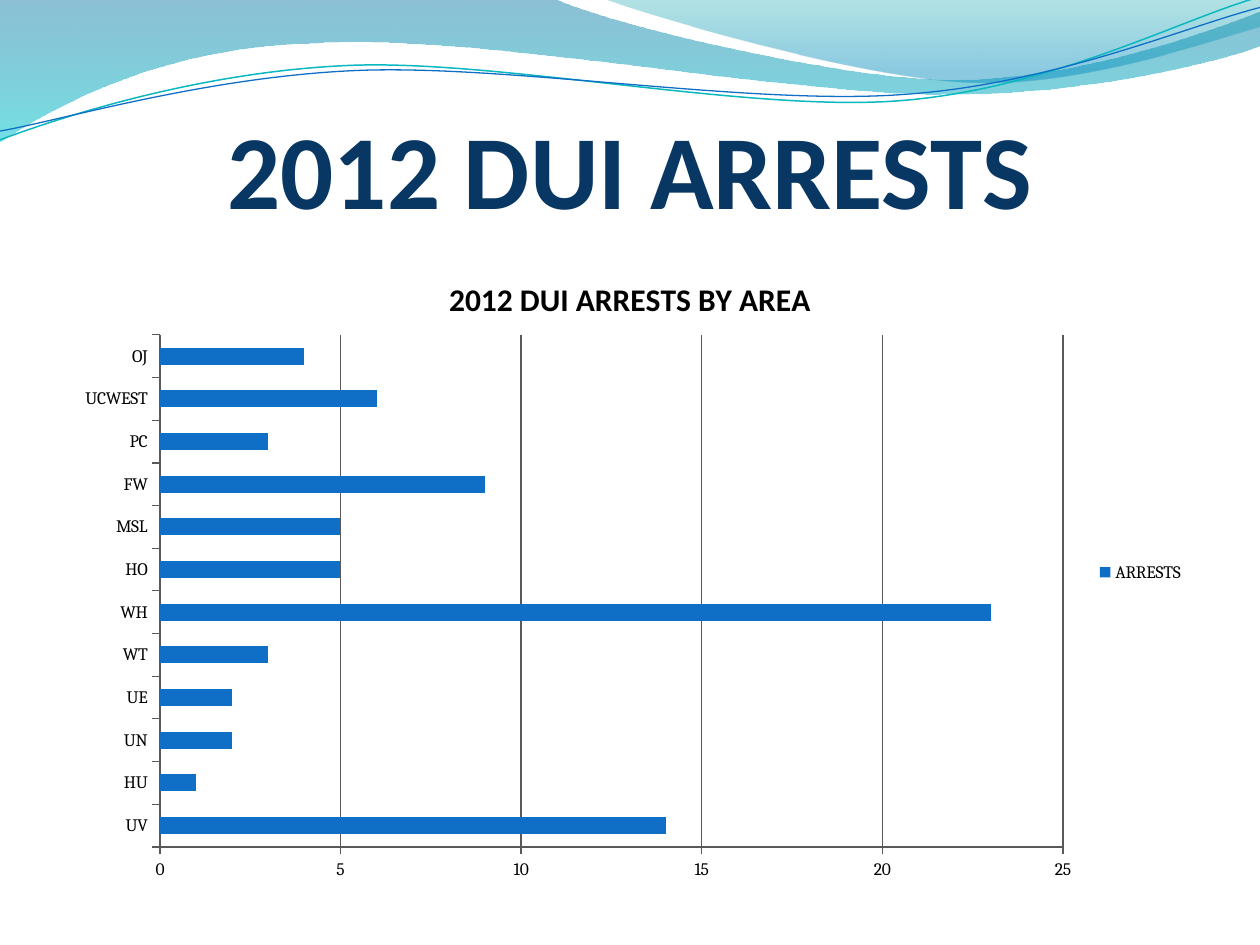
from math import cos, radians, sin
from lxml.etree import SubElement
from pptx import Presentation
from pptx.chart.data import CategoryChartData
from pptx.dml.color import RGBColor
from pptx.enum.chart import XL_CHART_TYPE as CT, XL_LEGEND_POSITION as LP, XL_TICK_MARK as TM
from pptx.enum.text import MSO_ANCHOR, PP_ALIGN
from pptx.oxml.ns import qn
from pptx.util import Pt

TITLE = "2012 DUI ARRESTS"
CHART_TITLE = "2012 DUI ARRESTS BY AREA"
SERIES = "ARRESTS"
ARRESTS = {"UV": 14, "HU": 1, "UN": 2, "UE": 2, "WT": 3, "WH": 23,
           "HO": 5, "MSL": 5, "FW": 9, "PC": 3, "UCWEST": 6, "OJ": 4}
BLUE, NAVY, BLACK, GRID = "0F6FC6", "083763", "000000", "595959"
CHART_BOX = (36, 144, 648, 366)
PLOT_BOX = (55.4, 47.4, 516, 292.6)  # inside the chart
WAVE_TILT = -2.7

# Outlines in points: a step of one point is straight, of three a cubic curve.
# Gradient stops: position, colour, opacity in percent.
BANDS = [
    ([[(0, 0)], [(316.8, -0.7)],
      [(342.7, 12.2), (478, 45.4), (545.8, 45.4)],
      [(614, 45.4), (689.8, 18.7), (720, 6.5)],
      [(720.7, 25.9)],
      [(707.8, 31.7), (626.4, 54.7), (537.1, 54)],
      [(447.8, 54), (275, 20.2), (185, 24.5)],
      [(92.9, 25.9), (33.1, 59.8), (-0.7, 81.4)]],
     [(0, "0074A1", 45), (1, "00C6CF", 55)]),
    ([[(344.9, -0.7)],
      [(366.5, 7.9), (491, 44.6), (553.7, 46.8)],
      [(616.3, 49.7), (691.9, 23), (720, 15.1)],
      [(720, 0)]],
     [(0, "00A1A9", 30), (0.8, "008BBF", 45)]),
]
# Waves: steps, centre, colour, width.
WAVES = [
    ([[(0, 79.9)],
      [(34.6, 67), (113.8, 41), (199.4, 37.4)],
      [(284.4, 33.8), (427, 64.1), (513.4, 57.6)],
      [(599.8, 51.1), (675.4, 10.8), (718.6, -1.4)]],
     (359.3, 41.4), "0AB8BF", 0.85),
    ([[(0, 74.9)],
      [(33.8, 69.1), (118, 43.9), (203.8, 40.3)],
      [(290.2, 36.7), (429.8, 60.5), (516.2, 54)],
      [(602, 48.2), (677.5, 15.1), (720, 4.3)]],
     (359.6, 42.5), BLUE, 0.75),
]


def rgb(color):
    return RGBColor.from_string(color)


def turn(steps, centre, degrees):
    cx, cy = centre
    c, d = cos(radians(degrees)), sin(radians(degrees))
    return [[(cx + (x - cx) * c - (y - cy) * d, cy + (x - cx) * d + (y - cy) * c)
             for x, y in step] for step in steps]


def add_outline(s, steps, close):
    """Build a freeform through the step ends, then bend its curved steps."""
    ends = [(Pt(x), Pt(y)) for x, y in (step[-1] for step in steps)]
    builder = s.shapes.build_freeform(*ends[0])
    builder.add_line_segments(ends[1:], close=close)
    sp = builder.convert_to_shape()
    sp.shadow.inherit = False

    xs, ys = zip(*(pt for step in steps for pt in step))
    left, top = min(xs), min(ys)
    sp.left, sp.top = Pt(left), Pt(top)
    sp.width, sp.height = Pt(max(xs) - left), Pt(max(ys) - top)
    outline = next(sp._element.iter(qn("a:path")))
    outline.set("w", str(sp.width))
    outline.set("h", str(sp.height))
    for node, step in zip(list(outline), steps):
        for pt in list(node):
            node.remove(pt)
        if len(step) == 3:
            curve = SubElement(outline, qn("a:cubicBezTo"))
            outline.replace(node, curve)
            node = curve
        for x, y in step:
            SubElement(node, qn("a:pt"), x=str(Pt(x - left)), y=str(Pt(y - top)))
    return sp


def add_band(s, steps, stops):
    sp = add_outline(s, steps, True)
    sp.line.fill.background()
    sp.fill.gradient()
    sp.fill.gradient_angle = 270
    for stop, (position, color, _) in zip(sp.fill.gradient_stops, stops):
        stop.position = position
        stop.color.rgb = rgb(color)
    for clr, (_, _, opacity) in zip(sp._element.spPr.iter(qn("a:srgbClr")), stops):
        SubElement(clr, qn("a:alpha"), val=str(opacity * 1000))


def add_wave(s, steps, centre, color, width):
    sp = add_outline(s, turn(steps, centre, -WAVE_TILT), False)
    sp.rotation = WAVE_TILT
    sp.fill.background()
    sp.line.color.rgb = rgb(color)
    sp.line.width = Pt(width)


def set_font(font, name, size, color, bold=False):
    font.name, font.size, font.bold = name, Pt(size), bold
    font.color.rgb = rgb(color)


def add_title(s):
    sp = s.shapes.title
    sp.left, sp.top, sp.width, sp.height = Pt(36), Pt(42), Pt(648), Pt(90)
    tf = sp.text_frame
    tf.word_wrap = True
    tf.vertical_anchor = MSO_ANCHOR.BOTTOM
    tf.margin_left = tf.margin_right = tf.margin_bottom = 0
    tf.margin_top = Pt(3.6)
    p = tf.paragraphs[0]
    p.alignment = PP_ALIGN.CENTER
    r = p.add_run()
    r.text = TITLE
    set_font(r.font, "Calibri", 60, NAVY, True)


def place_plot(plot_area):
    """Fix the inner plot area, as shares of the chart."""
    layout = plot_area.find(qn("c:layout"))
    if layout is None:
        layout = SubElement(plot_area, qn("c:layout"))
        plot_area.insert(0, layout)
    manual = SubElement(layout, qn("c:manualLayout"))
    _, _, w, h = CHART_BOX
    shares = [v / whole for v, whole in zip(PLOT_BOX, (w, h, w, h))]
    values = [("layoutTarget", "inner"), ("xMode", "edge"), ("yMode", "edge"),
              *zip("xywh", shares)]
    for tag, value in values:
        SubElement(manual, qn("c:" + tag), val=str(value))


def add_arrests_chart(s):
    data = CategoryChartData()
    data.categories = list(ARRESTS)
    data.add_series(SERIES, list(ARRESTS.values()))
    chart = s.shapes.add_chart(CT.BAR_CLUSTERED, *map(Pt, CHART_BOX), data).chart
    set_font(chart.font, "Cambria", 10, BLACK)

    p = chart.chart_title.text_frame.paragraphs[0]
    r = p.add_run()
    r.text = CHART_TITLE
    for font in (p.font, r.font):
        set_font(font, "Calibri", 18, BLACK, True)
    chart.chart_title.include_in_layout = False

    chart.has_legend = True
    chart.legend.position = LP.RIGHT
    chart.legend.include_in_layout = False

    value_axis = chart.value_axis
    value_axis.minimum_scale, value_axis.maximum_scale, value_axis.major_unit = 0, 25, 5
    value_axis.has_major_gridlines = True
    for axis in (chart.category_axis, value_axis):
        axis.major_tick_mark = TM.OUTSIDE
        axis.minor_tick_mark = TM.NONE
    for part in (chart.category_axis, value_axis, value_axis.major_gridlines):
        part.format.line.color.rgb = rgb(GRID)
        part.format.line.width = Pt(0.75)

    plot = chart.plots[0]
    plot.gap_width = 150
    plot.vary_by_categories = False
    fill = plot.series[0].format.fill
    fill.solid()
    fill.fore_color.rgb = rgb(BLUE)
    place_plot(next(chart._chartSpace.iter(qn("c:plotArea"))))


def main():
    prs = Presentation()
    prs.slide_width, prs.slide_height = Pt(720), Pt(540)
    s = prs.slides.add_slide(prs.slide_layouts[5])
    for band in BANDS:
        add_band(s, *band)
    for wave in WAVES:
        add_wave(s, *wave)
    add_title(s)
    add_arrests_chart(s)
    prs.save("out.pptx")


if __name__ == "__main__":
    main()
